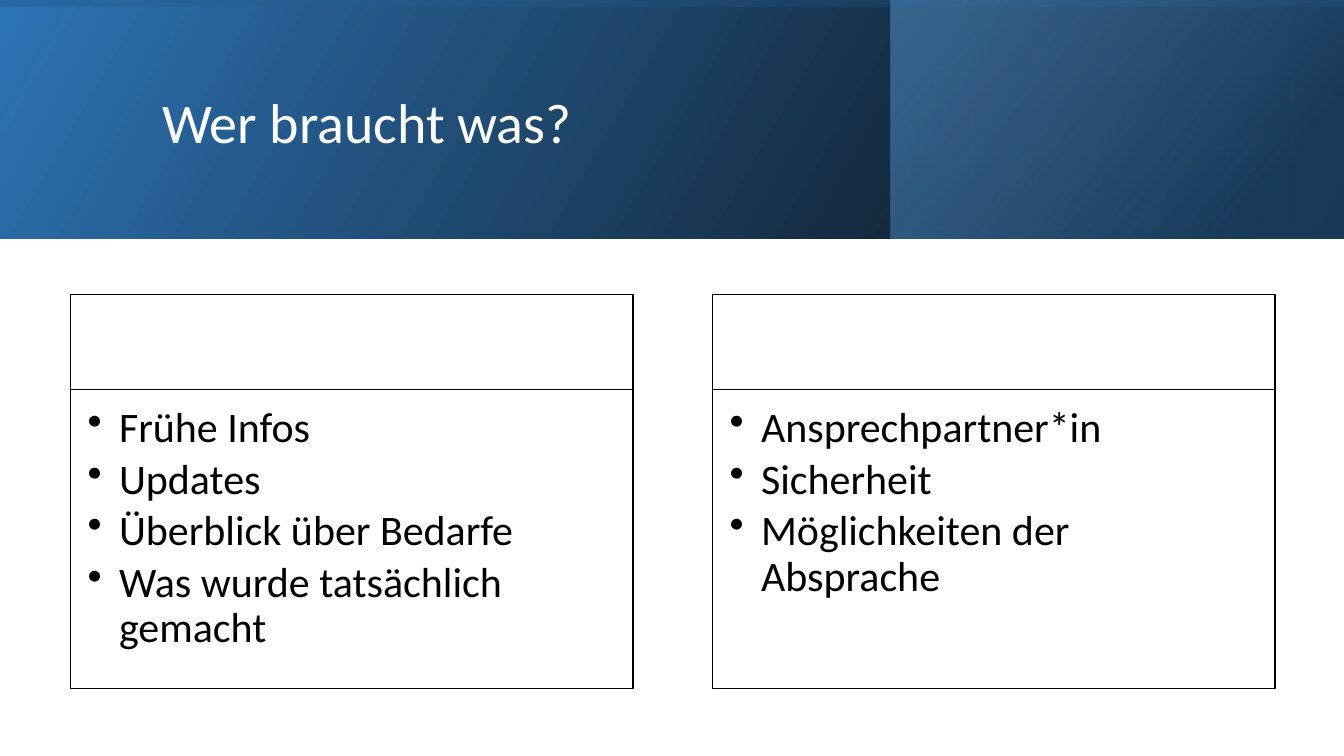
from dataclasses import dataclass

from lxml import etree
from pptx import Presentation
from pptx import util as u
from pptx.dml.color import RGBColor
from pptx.enum import shapes, text
from pptx.oxml import ns


@dataclass(frozen=True)
class Theme:
    """Colours, font and type sizes of the slide."""
    font: str = "Calibri"
    title_size: int = 40
    body_size: int = 30
    white: str = "FFFFFF"
    black: str = "000000"
    blue: str = "2E75B6"
    navy: str = "1F4E79"
    sky: str = "5B9BD5"


T = Theme()
CARDS = [
    ["Frühe Infos", "Updates", "Überblick über Bedarfe", "Was wurde tatsächlich gemacht"],
    ["Ansprechpartner*in", "Sicherheit", "Möglichkeiten der Absprache"],
]


def add_node(parent, tag, **attrs):
    """Append a DrawingML element to a parent."""
    return etree.SubElement(parent, ns.qn(tag), **attrs)


def set_alpha(color_format, percent):
    """Make a solid fill partly transparent."""
    for clr in color_format._xPr.iter(ns.qn("a:srgbClr")):
        add_node(clr, "a:alpha", val=str(percent * 1000))


def add_rect(s, x, y, w, h):
    """Add a plain rectangle, measured in centimetres."""
    sp = s.shapes.add_shape(shapes.MSO_SHAPE.RECTANGLE, u.Cm(x), u.Cm(y), u.Cm(w), u.Cm(h))
    sp.shadow.inherit = False
    return sp


def add_gradient(s, x, y, w, h, stops, angle, turn=0):
    """Add a mirrored rectangle with a translucent linear gradient."""
    sp = add_rect(s, x, y, w, h)
    sp.rotation = turn
    sp.line.fill.background()
    sp_pr = sp._element.spPr
    sp_pr.xfrm.set("flipH", "1")
    grad = etree.Element(ns.qn("a:gradFill"), rotWithShape="1")
    stop_list = add_node(grad, "a:gsLst")
    for pos, color, alpha in stops:
        stop = add_node(stop_list, "a:gs", pos=str(pos * 1000))
        clr = add_node(stop, "a:srgbClr", val=color)
        add_node(clr, "a:alpha", val=str(alpha * 1000))
    add_node(grad, "a:lin", ang=str(angle * 60000), scaled="0")
    sp_pr.insert(2, grad)


def style_run(p, size, color):
    """Format every run of a paragraph."""
    for r in p.runs:
        r.font.name = T.font
        r.font.size = u.Pt(size)
        r.font.color.rgb = RGBColor.from_string(color)


def add_header(s, x, y, w, h, title):
    """Place the gradient band and the title."""
    add_gradient(s, x, y, w, h, [(0, T.black, 96), (100, T.blue, 100)], 330)
    add_gradient(s, x + 22.45, y, w - 22.45, h, [(19, T.navy, 68), (100, T.sky, 48)], 320)
    add_gradient(s, x + (w - h) / 2, y + (h - w) / 2, h, w,
                 [(23, T.blue, 16), (99, T.black, 45)], 350, 270)
    box = s.shapes.add_textbox(u.Cm(x + 3.84), u.Cm(y + 0.97), u.Cm(27), u.Cm(4.37))
    tf = box.text_frame
    tf.word_wrap = True
    tf.vertical_anchor = text.MSO_ANCHOR.MIDDLE
    tf.text = title
    p = tf.paragraphs[0]
    p.line_spacing = 0.9
    style_run(p, T.title_size, T.white)


def add_bullets(tf, items):
    """Fill a text frame with a bulleted list."""
    tf.word_wrap = True
    tf.vertical_anchor = text.MSO_ANCHOR.TOP
    tf.margin_left = tf.margin_top = u.Cm(0.43)
    tf.margin_right, tf.margin_bottom = u.Cm(0.58), u.Cm(0.66)
    tf.text = "\n".join(items)
    for p in tf.paragraphs:
        p.level = 1
        p.alignment = text.PP_ALIGN.LEFT
        p.line_spacing = 0.9
        p.space_after = u.Pt(4.5)
        p_pr = p._p.get_or_add_pPr()
        p_pr.set("marL", str(u.Cm(0.79)))
        p_pr.set("indent", str(-u.Cm(0.79)))
        add_node(p_pr, "a:buChar", char="•")
        style_run(p, T.body_size, T.black)


def add_card(s, x, y, w, h, items):
    """Place an empty heading box above a box with a bulleted list."""
    head_h = 2.39
    head = add_rect(s, x, y, w, head_h)
    body = add_rect(s, x, y + head_h, w, h - head_h)
    for sp in (head, body):
        sp.fill.solid()
        sp.fill.fore_color.rgb = RGBColor.from_string(T.white)
        sp.line.color.rgb = RGBColor.from_string(T.black)
        sp.line.width = u.Pt(1)
    set_alpha(body.fill.fore_color, 90) if hasattr(body.fill.fore_color, "_xPr") else None
    add_bullets(body.text_frame, items)


def add_cards(s, x, y, w, h, cards, gap=2.01):
    """Spread the cards evenly over a row."""
    card_w = (w - gap * (len(cards) - 1)) / len(cards)
    for i, items in enumerate(cards):
        add_card(s, x + i * (card_w + gap), y, card_w, h, items)


def main():
    """Build and save the slide."""
    prs = Presentation()
    prs.slide_width, prs.slide_height = u.Cm(33.87), u.Cm(19.05)
    s = prs.slides.add_slide(prs.slide_layouts[6])
    add_header(s, 0, 0, 33.87, 6.02, "Wer braucht was?")
    add_cards(s, 1.78, 7.42, 30.35, 9.93, CARDS)
    prs.save("out.pptx")


if __name__ == "__main__":
    main()
